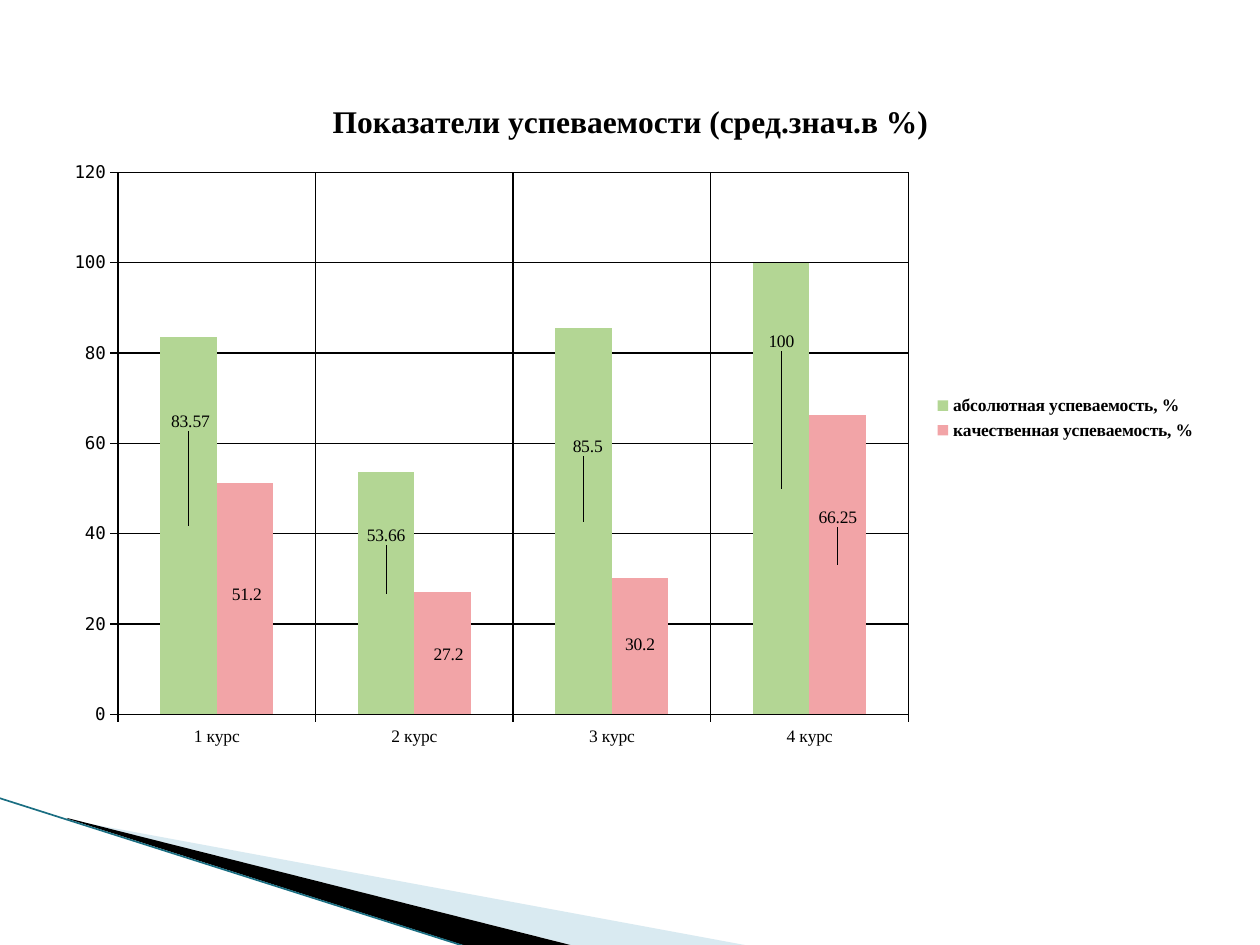
from dataclasses import dataclass

from lxml import etree
from pptx import Presentation
from pptx import util as u
from pptx.chart.data import CategoryChartData
from pptx.dml.color import RGBColor
from pptx.enum import chart as ch
from pptx.enum import shapes
from pptx.oxml import parse_xml
from pptx.oxml.ns import nsdecls, qn

PX = 914400 / 126  # EMU in one px
BLACK = RGBColor(0x00, 0x00, 0x00)
PALE_BLUE = RGBColor(0xA0, 0xCB, 0xDC)
TEAL = RGBColor(0x1A, 0x6E, 0x82)
GREEN = RGBColor(0xB3, 0xD6, 0x94)
PINK = RGBColor(0xF2, 0xA4, 0xA7)
SERIF = "Times New Roman"
MONO = "DejaVu Sans Mono"
CHART_BOX = (52, 76, 1157, 684)
COURSES = ["1 курс", "2 курс", "3 курс", "4 курс"]


@dataclass
class Wedge:
    points: list[tuple[int, int]]
    frame: tuple[int, int, int, int]  # the outline may reach beyond it
    color: RGBColor
    opacity: int = 100


@dataclass
class Measure:
    name: str
    values: list[float]
    color: RGBColor
    label_shifts: list[tuple[int, int]]  # px from the middle of each bar


WEDGES = [
    Wedge([(69, 820), (750, 946), (575, 946), (69, 819)],
          (98, 689, 524, 199), PALE_BLUE, 40),
    Wedge([(67, 818), (574, 946), (469, 947), (68, 819)],
          (-8, 798, 524, 116), BLACK),
]
MEASURES = [
    Measure("абсолютная успеваемость, %", [83.57, 53.66, 85.5, 100], GREEN,
            [(2, -104), (0, -58), (4, -75), (0, -147)]),
    Measure("качественная успеваемость, %", [51.2, 27.2, 30.2, 66.25], PINK,
            [(2, -4), (6, 2), (0, -2), (0, -47)]),
]


def px(length: int) -> u.Emu:
    return u.Emu(round(length * PX))


def format_font(font, *, name: str = SERIF, size: int = 10, bold: bool = False) -> None:
    font.name, font.size, font.bold = name, u.Pt(size), bold
    font.color.rgb = BLACK


def write(frame, words: str, **style) -> None:
    frame.text = words
    format_font(frame.paragraphs[0].runs[0].font, **style)


def layout_xml(x: int, y: int, w: int = 0, h: int = 0, *, edge: bool = True):
    """Manual chart layout; px become shares of the chart's size."""
    parts = ['<c:layoutTarget val="inner"/>'] if w else []
    if edge:
        parts += ['<c:xMode val="edge"/>', '<c:yMode val="edge"/>']
    for tag, length, whole in zip("xywh", (x, y, w, h), CHART_BOX[2:] * 2):
        if tag in "xy" or length:
            parts.append(f'<c:{tag} val="{length / whole:.4f}"/>')
    return parse_xml(f'<c:layout {nsdecls("c")}><c:manualLayout>{"".join(parts)}'
                     '</c:manualLayout></c:layout>')


def set_layout(element, layout, after: str | None = None) -> None:
    for old in element.findall(qn("c:layout")):
        element.remove(old)
    if after:
        element.find(qn(after)).addnext(layout)
    else:
        element.insert(0, layout)


def set_frame(shape, frame: tuple[int, int, int, int]) -> None:
    """Give a freeform another frame while its outline stays in place."""
    left, top, width, height = map(px, frame)
    shift = {"x": shape.left - left, "y": shape.top - top}
    for point in shape._element.iter(qn("a:pt")):
        for axis, offset in shift.items():
            point.set(axis, str(int(point.get(axis)) + offset))
    outline = next(shape._element.iter(qn("a:path")))
    outline.set("w", str(width))
    outline.set("h", str(height))
    shape.left, shape.top, shape.width, shape.height = left, top, width, height


def draw_wedge(page, wedge: Wedge) -> None:
    first, *rest = [(px(x), px(y)) for x, y in wedge.points]
    builder = page.shapes.build_freeform(*first)
    builder.add_line_segments(rest)
    shape = builder.convert_to_shape()
    set_frame(shape, wedge.frame)
    shape.shadow.inherit = False
    shape.fill.solid()
    shape.fill.fore_color.rgb = wedge.color
    shape.line.fill.background()
    if wedge.opacity < 100:
        color = shape.fill._xPr.find(qn("a:solidFill"))[0]
        etree.SubElement(color, qn("a:alpha")).set("val", str(wedge.opacity * 1000))


def draw_edge(page) -> None:
    edge = page.shapes.add_connector(
        shapes.MSO_CONNECTOR.STRAIGHT, px(-1), px(798), px(467), px(947))
    edge.line.color.rgb = TEAL
    edge.line.width = u.Pt(0.95)
    etree.SubElement(edge._element.spPr, qn("a:effectLst"))


def style_axis(axis, font_name: str) -> None:
    axis.has_major_gridlines = True
    for line in (axis.format.line, axis.major_gridlines.format.line):
        line.color.rgb = BLACK
        line.width = u.Pt(0.75)
    axis.major_tick_mark = ch.XL_TICK_MARK.CROSS
    axis.minor_tick_mark = ch.XL_TICK_MARK.NONE
    format_font(axis.tick_labels.font, name=font_name)


def style_series(series, measure: Measure) -> None:
    series.format.fill.solid()
    series.format.fill.fore_color.rgb = measure.color
    labels = series.data_labels
    labels.show_value = True
    labels.position = ch.XL_LABEL_POSITION.CENTER
    format_font(labels.font)
    for index in range(len(measure.values)):
        label = series.points[index].data_label
        format_font(label.font)
        label.position = ch.XL_LABEL_POSITION.CENTER
    for element, shift in zip(series._element.iter(qn("c:dLbl")), measure.label_shifts):
        set_layout(element, layout_xml(*shift, edge=False), after="c:idx")
    # Moved labels get no leader lines
    group = series._element.find(qn("c:dLbls"))
    for leader in group.findall(qn("c:showLeaderLines")):
        group.remove(leader)
    group.append(parse_xml(
        f'<c:extLst {nsdecls("c")}><c:ext uri="{{CE6537A1-D6FC-4f65-9D91-7224C49458BB}}" '
        'xmlns:c15="http://schemas.microsoft.com/office/drawing/2012/chart">'
        '<c15:showLeaderLines val="0"/></c:ext></c:extLst>'))


def draw_chart(page) -> None:
    data = CategoryChartData()
    data.categories = COURSES
    for measure in MEASURES:
        data.add_series(measure.name, measure.values)
    chart = page.shapes.add_chart(
        ch.XL_CHART_TYPE.COLUMN_CLUSTERED, *map(px, CHART_BOX), data).chart
    format_font(chart.font, name=MONO)

    # Title and legend
    chart.has_title = True
    write(chart.chart_title.text_frame, "Показатели успеваемости (сред.знач.в %)",
          size=18, bold=True)
    set_layout(chart.chart_title._element, layout_xml(275, 20), after="c:tx")
    chart.has_legend = True
    chart.legend.position = ch.XL_LEGEND_POSITION.RIGHT
    chart.legend.include_in_layout = False
    format_font(chart.legend.font, bold=True)

    # Axes and bars
    style_axis(chart.category_axis, SERIF)
    style_axis(chart.value_axis, MONO)
    chart.value_axis.minimum_scale = 0
    chart.value_axis.maximum_scale = 120
    chart.value_axis.major_unit = 20
    plot = chart.plots[0]
    plot.vary_by_categories = False
    plot.gap_width, plot.overlap = 150, 0
    for series, measure in zip(plot.series, MEASURES):
        style_series(series, measure)
    plot_area = next(chart._chartSpace.iter(qn("c:plotArea")))
    set_layout(plot_area, layout_xml(66, 96.5, 790.5, 542))


def main() -> None:
    deck = Presentation()
    deck.slide_width, deck.slide_height = px(1260), px(945)
    page = deck.slides.add_slide(deck.slide_layouts[6])
    # Corner decoration
    for wedge in WEDGES:
        draw_wedge(page, wedge)
    draw_edge(page)
    # Results by year of study
    draw_chart(page)
    deck.save("out.pptx")


if __name__ == "__main__":
    main()
